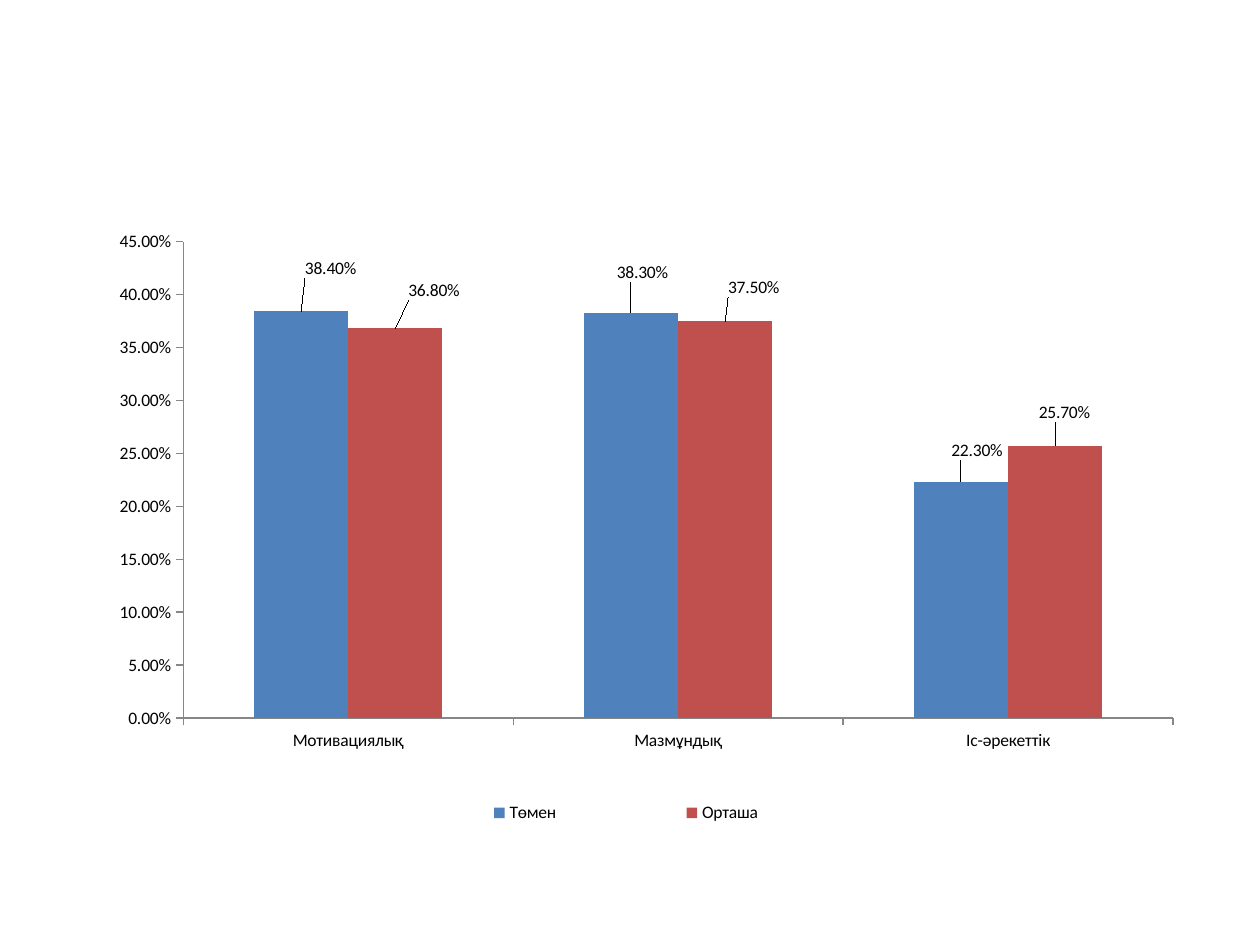
"""Build a slide with a clustered column chart of three components at two levels."""
from lxml import etree
from pptx import Presentation
from pptx.chart.data import CategoryChartData
from pptx.dml.color import RGBColor
from pptx.enum import chart as ch
from pptx.oxml import ns
from pptx.util import Inches, Pt

CATEGORIES = ["Мотивациялық", "Мазмұндық", "Іс-әрекеттік"]
SERIES = [
    {"name": "Төмен", "values": [0.384, 0.383, 0.223], "color": "low",
     "offsets": [(0.026, -0.045), (0.01, -0.04), (0.014, -0.027)]},
    {"name": "Орташа", "values": [0.368, 0.375, 0.257], "color": "medium",
     "offsets": [(0.034, -0.037), (0.025, -0.03), (0.008, -0.03)]},
]
COLORS = {"low": "4F81BD", "medium": "C0504D", "text": "000000", "axis": "878787"}
PERCENT = "0.00%"
PLOT = {"layoutTarget": "inner", "xMode": "edge", "yMode": "edge",
        "x": 0.106, "y": 0.034, "w": 0.873, "h": 0.764}
LEGEND = {"xMode": "edge", "yMode": "edge", "x": 0.27, "y": 0.915, "w": 0.453, "h": 0.07}


def rgb(name):
    return RGBColor.from_string(COLORS[name])


def set_layout(parent, values, index):
    for old in parent.findall(ns.qn("c:layout")):
        parent.remove(old)
    layout = etree.Element(ns.qn("c:layout"))
    manual = etree.SubElement(layout, ns.qn("c:manualLayout"))
    for tag, value in values.items():
        etree.SubElement(manual, ns.qn(f"c:{tag}")).set("val", str(value))
    parent.insert(index, layout)


def format_axis(axis):
    axis.has_major_gridlines = False
    axis.major_tick_mark = ch.XL_TICK_MARK.OUTSIDE
    axis.minor_tick_mark = ch.XL_TICK_MARK.NONE
    axis.format.line.color.rgb = rgb("axis")
    axis.format.line.width = Pt(0.75)


def format_series(series, item):
    series.format.fill.solid()
    series.format.fill.fore_color.rgb = rgb(item["color"])
    series.invert_if_negative = False
    labels = series.data_labels
    labels.show_value = True
    labels.number_format = PERCENT
    labels.number_format_is_linked = False
    for i, (x, y) in enumerate(item["offsets"]):
        series.points[i].data_label.position = ch.XL_LABEL_POSITION.OUTSIDE_END
        label = labels._element.findall(ns.qn("c:dLbl"))[i]
        set_layout(label, {"x": x, "y": y}, 1)


def main():
    prs = Presentation()
    prs.slide_width, prs.slide_height = Inches(10), Inches(7.5)
    s = prs.slides.add_slide(prs.slide_layouts[6])

    data = CategoryChartData(number_format=PERCENT)
    data.categories = CATEGORIES
    for item in SERIES:
        data.add_series(item["name"], item["values"])
    chart = s.shapes.add_chart(ch.XL_CHART_TYPE.COLUMN_CLUSTERED, Inches(0.5), Inches(1.75),
                               Inches(9), Inches(4.95), data).chart
    chart.has_title = False
    chart.font.name, chart.font.size = "Calibri", Pt(10)
    chart.font.color.rgb = rgb("text")

    plot = chart.plots[0]
    plot.gap_width, plot.overlap = 150, 0
    plot.vary_by_categories = False
    for series, item in zip(plot.series, SERIES):
        format_series(series, item)

    for axis in (chart.category_axis, chart.value_axis):
        format_axis(axis)
    chart.category_axis.tick_label_position = ch.XL_TICK_LABEL_POSITION.LOW
    value_axis = chart.value_axis
    value_axis.minimum_scale, value_axis.maximum_scale, value_axis.major_unit = 0, 0.45, 0.05
    value_axis.tick_labels.number_format = PERCENT
    value_axis.tick_labels.number_format_is_linked = False

    chart.has_legend = True
    chart.legend.position = ch.XL_LEGEND_POSITION.BOTTOM
    chart.legend.include_in_layout = False
    set_layout(chart.legend._element, LEGEND, 1)
    set_layout(chart._chartSpace.chart.plotArea, PLOT, 0)
    prs.save("out.pptx")


if __name__ == "__main__":
    main()
